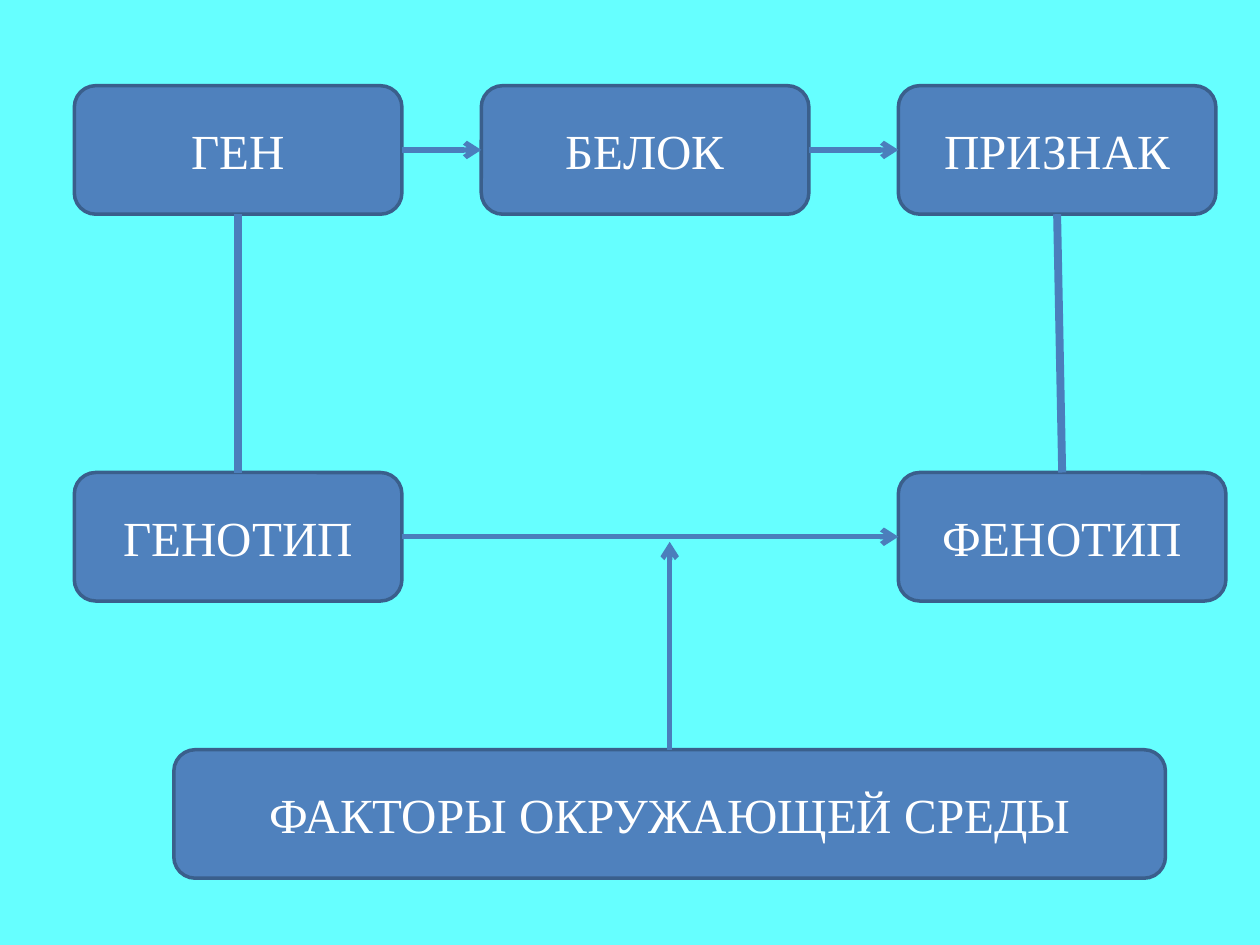
from dataclasses import dataclass

from pptx import Presentation
from pptx.dml.color import RGBColor
from pptx.enum.shapes import MSO_CONNECTOR as CONN, MSO_SHAPE as SHAPE
from pptx.enum.text import MSO_ANCHOR as ANCHOR, PP_ALIGN as ALIGN
from pptx.oxml.ns import qn
from pptx.util import Inches, Pt
from lxml.etree import SubElement

BOX_H = 1.02
BOX_FILL, BOX_LINE, LINK_COLOR = "4F81BD", "3A5F8C", "4B7EBC"


@dataclass(frozen=True)
class Box:
    text: str
    x: float
    y: float
    w: float = 2.6

    @property
    def left(self) -> tuple[float, float]:
        return self.x, self.y + BOX_H / 2

    @property
    def right(self) -> tuple[float, float]:
        return self.x + self.w, self.y + BOX_H / 2

    @property
    def top(self) -> tuple[float, float]:
        return self.x + self.w / 2, self.y

    @property
    def bottom(self) -> tuple[float, float]:
        return self.x + self.w / 2, self.y + BOX_H


@dataclass(frozen=True)
class Link:
    start: tuple[float, float]
    end: tuple[float, float]
    width: float = 3
    arrow: bool = True


def rgb(value: str) -> RGBColor:
    return RGBColor.from_string(value)


def write(tf, text: str, *, size: float = 28, font: str = "Times New Roman",
          color: str = "FFFFFF", align=ALIGN.CENTER) -> None:
    tf.word_wrap = True
    tf.vertical_anchor = ANCHOR.MIDDLE
    p = tf.paragraphs[0]
    p.alignment = align
    r = p.add_run()
    r.text = text
    r.font.size = Pt(size)
    r.font.name = font
    r.font.color.rgb = rgb(color)


def draw_box(s, box: Box) -> None:
    sp = s.shapes.add_shape(SHAPE.ROUNDED_RECTANGLE, Inches(box.x), Inches(box.y),
                            Inches(box.w), Inches(BOX_H))
    sp.shadow.inherit = False
    sp.fill.solid()
    sp.fill.fore_color.rgb = rgb(BOX_FILL)
    sp.line.color.rgb = rgb(BOX_LINE)
    sp.line.width = Pt(2)
    write(sp.text_frame, box.text)


def draw_link(s, link: Link) -> None:
    cn = s.shapes.add_connector(CONN.STRAIGHT, *map(Inches, link.start + link.end))
    cn.line.color.rgb = rgb(LINK_COLOR)
    cn.line.width = Pt(link.width)
    if link.arrow:
        SubElement(cn.line._get_or_add_ln(), qn("a:tailEnd"), type="arrow")
    SubElement(cn._element.spPr, qn("a:effectLst"))


def main() -> None:
    prs = Presentation()
    prs.slide_width, prs.slide_height = Inches(10), Inches(7.5)
    s = prs.slides.add_slide(prs.slide_layouts[6])
    s.background.fill.solid()
    s.background.fill.fore_color.rgb = rgb("66FFFF")

    left_x, middle_x, right_x = 0.59, 3.82, 7.13
    top_y, middle_y, bottom_y = 0.68, 3.75, 5.95
    gene = Box("ГЕН", left_x, top_y)
    protein = Box("БЕЛОК", middle_x, top_y)
    trait = Box("ПРИЗНАК", right_x, top_y, 2.52)
    genotype = Box("ГЕНОТИП", left_x, middle_y)
    phenotype = Box("ФЕНОТИП", right_x, middle_y)
    factors = Box("ФАКТОРЫ ОКРУЖАЮЩЕЙ СРЕДЫ", 1.38, bottom_y, 7.87)

    for box in (gene, protein, genotype, phenotype, trait, factors):
        draw_box(s, box)

    for link in (
        Link(gene.right, protein.left),
        Link(genotype.right, phenotype.left),
        Link(protein.right, trait.left),
        Link(factors.top, (factors.top[0], 4.3)),
        Link(genotype.top, gene.bottom, 4.5, False),
        Link(phenotype.top, trait.bottom, 4.5, False),
    ):
        draw_link(s, link)

    prs.save("out.pptx")


if __name__ == "__main__":
    main()
